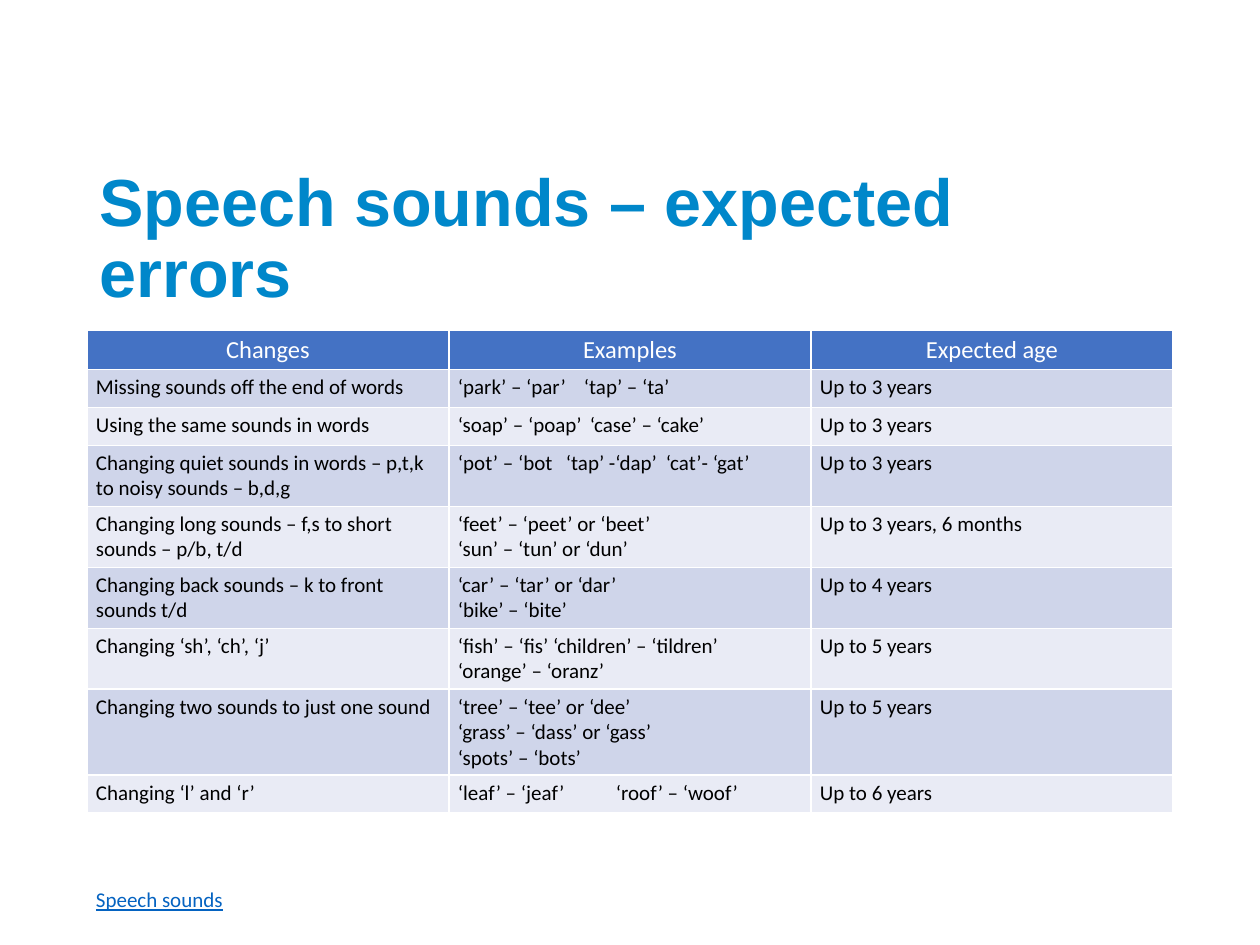
from lxml import etree
from pptx import Presentation
from pptx.dml.color import RGBColor
from pptx.enum.text import MSO_ANCHOR, MSO_AUTO_SIZE, PP_ALIGN
from pptx.oxml.ns import qn
from pptx.util import Emu, Pt

MIDDLE = MSO_ANCHOR.MIDDLE
GROW = MSO_AUTO_SIZE.SHAPE_TO_FIT_TEXT
CENTER = PP_ALIGN.CENTER
LEFT = PP_ALIGN.LEFT
SCALE = 914400 / 126

COLORS = {
    "title": "0087CA",
    "header": "4472C4",
    "odd": "CFD5EA",
    "even": "E9EBF5",
    "white": "FFFFFF",
    "text": "000000",
    "link": "0563C1",
}

HEADINGS = ["Changes", "Examples", "Expected age"]
ROWS = [
    ("Missing sounds off the end of words", "‘park’ – ‘par’\t‘tap’ – ‘ta’", "Up to 3 years", 38, [126]),
    ("Using the same sounds in words", "‘soap’ – ‘poap’\t‘case’ – ‘cake’", "Up to 3 years", 38, [132]),
    ("Changing quiet sounds in words – p,t,k to noisy sounds – b,d,g",
     "‘pot’ – ‘bot\t‘tap’ -‘dap’\t‘cat’- ‘gat’", "Up to 3 years", 61, [108, 208]),
    ("Changing long sounds – f,s to short sounds – p/b, t/d",
     "‘feet’ – ‘peet’ or ‘beet’\n‘sun’ – ‘tun’ or ‘dun’", "Up to 3 years, 6 months", 61, []),
    ("Changing back sounds – k to front sounds t/d",
     "‘car’ – ‘tar’ or ‘dar’\n‘bike’ – ‘bite’", "Up to 4 years", 61, []),
    ("Changing ‘sh’, ‘ch’, ‘j’",
     "‘fish’ – ‘fis’ ‘children’ – ‘tildren’\n‘orange’ – ‘oranz’", "Up to 5 years", 61, []),
    ("Changing two sounds to just one sound",
     "‘tree’ – ‘tee’ or ‘dee’\n‘grass’ – ‘dass’ or ‘gass’\n‘spots’ – ‘bots’", "Up to 5 years", 86, []),
    ("Changing ‘l’ and ‘r’", "‘leaf’ – ‘jeaf’\t‘roof’ – ‘woof’", "Up to 6 years", 38, [158]),
]


def px(length):
    return Emu(round(length * SCALE))


def color(name):
    return RGBColor.from_string(COLORS[name])


def add_run(para, text, size, font, shade, bold=False, underline=False):
    span = para.add_run()
    span.text = text
    span.font.size = Pt(size)
    span.font.name = font
    span.font.color.rgb = color(shade)
    span.font.bold = bold
    span.font.underline = underline


def set_insets(target):
    target.margin_left = target.margin_right = px(9)
    target.margin_top = target.margin_bottom = px(5)


def add_tabs(para, stops):
    tab_list = etree.SubElement(para._p.get_or_add_pPr(), qn("a:tabLst"))
    for stop in stops:
        etree.SubElement(tab_list, qn("a:tab"), pos=str(px(stop)), algn="l")


def add_borders(cell):
    properties = cell._tc.get_or_add_tcPr()
    for side in ("lnL", "lnR", "lnT", "lnB"):
        line = etree.SubElement(properties, qn(f"a:{side}"), w=str(Pt(1)))
        fill = etree.SubElement(line, qn("a:solidFill"))
        etree.SubElement(fill, qn("a:srgbClr"), val=COLORS["white"])


def fill_cell(cell, text, size, shade, fill, align=LEFT, stops=()):
    set_insets(cell)
    add_borders(cell)
    cell.fill.solid()
    cell.fill.fore_color.rgb = color(fill)
    for index, line in enumerate(text.split("\n")):
        frame = cell.text_frame
        para = frame.add_paragraph() if index else frame.paragraphs[0]
        para.alignment = align
        if stops:
            add_tabs(para, stops)
        add_run(para, line, size, "Calibri", shade)


def add_title(page, left, top, width, height):
    box = page.shapes.add_textbox(px(left), px(top), px(width), px(height))
    frame = box.text_frame
    frame.word_wrap = True
    frame.vertical_anchor = MIDDLE
    para = frame.paragraphs[0]
    para.line_spacing = 0.9
    add_run(para, "Speech sounds – expected errors", 38, "Arial", "title", bold=True)


def add_error_table(page, left, top, width, height):
    box = page.shapes.add_table(len(ROWS) + 1, len(HEADINGS), px(left), px(top), px(width), px(height))
    table = box.table
    for column in table.columns:
        column.width = px(width / len(HEADINGS))
    table.rows[0].height = px(height - sum(row[3] for row in ROWS))
    for index, heading in enumerate(HEADINGS):
        fill_cell(table.cell(0, index), heading, 14, "white", "header", CENTER)
    for number, (change, examples, age, row_height, stops) in enumerate(ROWS, 1):
        table.rows[number].height = px(row_height)
        fill = "odd" if number % 2 else "even"
        fill_cell(table.cell(number, 0), change, 12, "text", fill)
        fill_cell(table.cell(number, 1), examples, 12, "text", fill, stops=stops)
        fill_cell(table.cell(number, 2), age, 12, "text", fill)


def add_footer(page, left, top, width, height):
    box = page.shapes.add_textbox(px(left), px(top), px(width), px(height))
    frame = box.text_frame
    set_insets(frame)
    frame.word_wrap = False
    frame.auto_size = GROW
    add_run(frame.paragraphs[0], "Speech sounds", 12, "Calibri", "link", underline=True)


def main():
    deck = Presentation()
    deck.slide_width, deck.slide_height = px(1260), px(945)
    page = deck.slides.add_slide(deck.slide_layouts[6])
    add_title(page, 87, 197, 1086, 87)
    add_error_table(page, 87, 330, 1086, 482)
    add_footer(page, 87, 882, 147, 63)
    deck.save("out.pptx")


if __name__ == "__main__":
    main()
